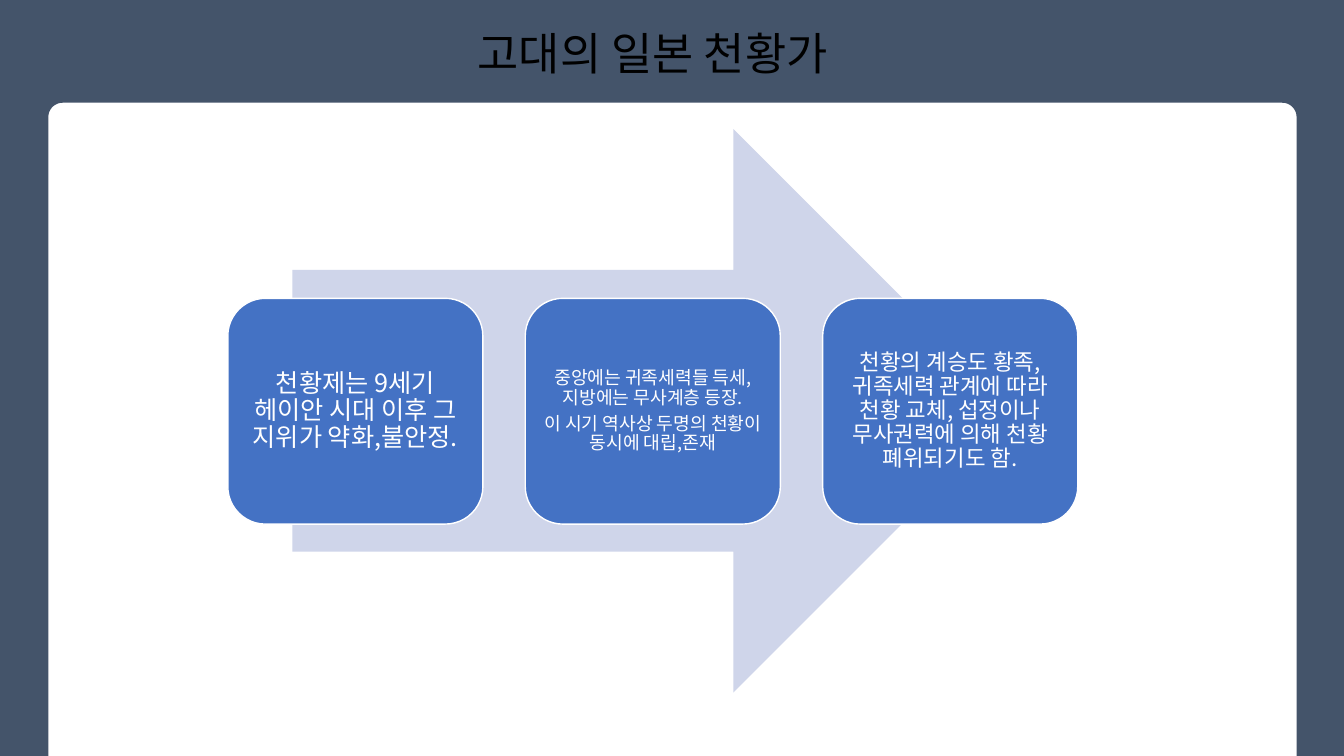
import math

from lxml import etree
from pptx import Presentation
from pptx import util as u
from pptx.dml.color import RGBColor
from pptx.enum import shapes, text
from pptx.oxml.ns import qn

INK = {"slate": "44546A", "pale": "CFD5EA", "blue": "4472C4", "white": "FFFFFF", "black": "000000"}
WIDE, HIGH = 13.33, 7.5
CARDS = [
    (18, 0.07, ["천황제는 9세기 헤이안 시대 이후 그 지위가 약화,불안정."]),
    (13, 0.05, ["중앙에는 귀족세력들 득세, 지방에는 무사계층 등장.",
                "이 시기 역사상 두명의 천황이 동시에 대립,존재"]),
    (16, 0.07, ["천황의 계승도 황족,귀족세력 관계에 따라 천황 교체, 섭정이나 무사권력에 의해 천황 폐위되기도 함."]),
]


class Deck:
    """Holds the style and the current slide, and draws each kind of element."""

    def __init__(self, slide, font):
        self.slide, self.font = slide, font

    def paint(self, shape, fill, line=None):
        shape.shadow.inherit = False
        shape.fill.solid()
        shape.fill.fore_color.rgb = RGBColor.from_string(INK[fill])
        if line:
            shape.line.color.rgb = RGBColor.from_string(INK[line])
            shape.line.width = u.Pt(1)
        else:
            shape.line.fill.background()
        return shape

    def frame(self, left, top, right, curve):
        ends = [(left + curve, 180), (right - curve, 270)]
        arch = [(x + curve * math.cos(math.radians(start + turn)),
                 top + curve + curve * math.sin(math.radians(start + turn)))
                for x, start in ends for turn in range(0, 91, 10)]
        pts = [(0, HIGH), (left, HIGH), *arch, (right, HIGH), (WIDE, HIGH), (WIDE, 0)]
        form = self.slide.shapes.build_freeform(0, 0, scale=u.Inches(1) / 1000)
        form.add_line_segments([(round(x * 1000), round(y * 1000)) for x, y in pts])
        self.paint(form.convert_to_shape(), "slate")

    def shape(self, kind, box, fill, line=None):
        return self.paint(self.slide.shapes.add_shape(kind, *map(u.Inches, box)), fill, line)

    def label(self, shape, lines, size, ink, inset, space=1.0, after=0):
        box = shape.text_frame
        pad = u.Inches(inset)
        look = {"word_wrap": True, "auto_size": text.MSO_AUTO_SIZE.NONE,
                "vertical_anchor": text.MSO_ANCHOR.MIDDLE, "margin_left": pad,
                "margin_right": pad, "margin_top": pad, "margin_bottom": pad}
        for name, value in look.items():
            setattr(box, name, value)
        form = {"alignment": text.PP_ALIGN.CENTER, "line_spacing": space,
                "space_before": u.Pt(0), "space_after": u.Pt(after)}
        for i, line in enumerate(lines):
            para = box.add_paragraph() if i else box.paragraphs[0]
            for name, value in form.items():
                setattr(para, name, value)
            run = para.add_run()
            run.text = line
            run.font.size, run.font.name = u.Pt(size), self.font
            run.font.color.rgb = RGBColor.from_string(INK[ink])
            etree.SubElement(run.font._element, qn("a:ea"), typeface=self.font)

    def title(self, words, box, size):
        head = self.slide.shapes.title
        for name, value in zip(("left", "top", "width", "height"), box):
            setattr(head, name, u.Inches(value))
        self.slide.shapes._spTree.append(head._element)
        self.label(head, [words], size, "black", 0.05)

    def card(self, box, size, inset, lines):
        tile = self.shape(shapes.MSO_SHAPE.ROUNDED_RECTANGLE, box, "blue", "white")
        self.label(tile, lines, size, "white", inset, 0.9, size * 0.35)


def main():
    show = Presentation()
    show.slide_width, show.slide_height = u.Inches(WIDE), u.Inches(HIGH)
    deck = Deck(show.slides.add_slide(show.slide_layouts[5]), "Noto Sans CJK KR")
    deck.frame(0.48, 1.02, 12.86, 0.14)
    deck.title("고대의 일본 천황가", (4.27, 0.2, 4.41, 0.64), 32)
    deck.shape(shapes.MSO_SHAPE.RIGHT_ARROW, (2.9, 1.28, 7.17, 5.59), "pale")
    for i, (size, inset, lines) in enumerate(CARDS):
        deck.card((2.26 + 2.95 * i, 2.96, 2.53, 2.24), size, inset, lines)
    show.save("out.pptx")


if __name__ == "__main__":
    main()
